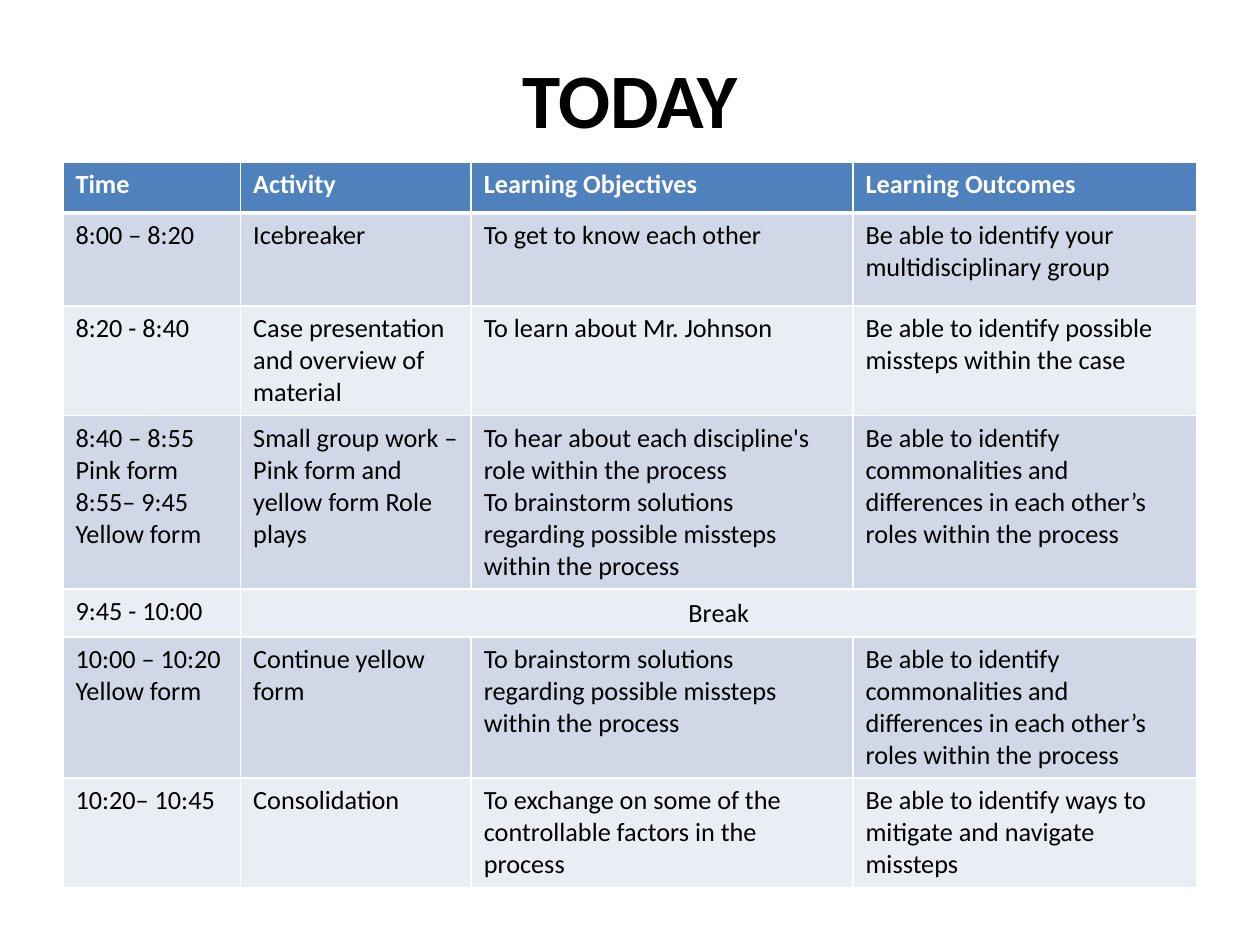
"""Build the TODAY agenda slide: a title above a seven-row schedule table."""
from lxml import etree
from pptx import Presentation
from pptx import util as u
from pptx.dml.color import RGBColor
from pptx.enum import text
from pptx.oxml import ns

BLACK = RGBColor(0x00, 0x00, 0x00)
WHITE = RGBColor(0xFF, 0xFF, 0xFF)
BLUE = RGBColor(0x4F, 0x81, 0xBD)
BANDS = [RGBColor(0xE9, 0xED, 0xF4), RGBColor(0xD0, 0xD8, 0xE8)]
FONT = "Calibri"

SOLUTIONS = "To brainstorm solutions regarding possible missteps within the process"
ROLES = ("Be able to identify commonalities and differences "
         "in each other’s roles within the process")
COLS = [1.41, 1.83, 3.03, 2.73]
ROWS = [
    (0.40, ["Time", "Activity", "Learning Objectives", "Learning Outcomes"]),
    (0.74, ["8:00 – 8:20", "Icebreaker", "To get to know each other",
            "Be able to identify your multidisciplinary group"]),
    (0.87, ["8:20 - 8:40", "Case presentation and overview of material",
            "To learn about Mr. Johnson",
            "Be able to identify possible missteps within the case"]),
    (1.37, ["8:40 – 8:55 Pink form\n8:55– 9:45\nYellow form",
            "Small group work – Pink form and yellow form Role plays",
            "To hear about each discipline's role within the process\n" + SOLUTIONS,
            ROLES]),
    (0.38, ["9:45 - 10:00", "Break", "", ""]),
    (1.12, ["10:00 – 10:20\nYellow form", "Continue yellow form", SOLUTIONS, ROLES]),
    (0.86, ["10:20– 10:45", "Consolidation",
            "To exchange on some of the controllable factors in the process",
            "Be able to identify ways to mitigate and navigate missteps"]),
]
BREAK_ROW = 4


def add_border(cell, side, width):
    ln = etree.SubElement(cell._tc.get_or_add_tcPr(), ns.qn("a:" + side),
                          w=str(u.Pt(width)))
    fill = etree.SubElement(ln, ns.qn("a:solidFill"))
    etree.SubElement(fill, ns.qn("a:srgbClr"), val=str(WHITE))


prs = Presentation()
prs.slide_width, prs.slide_height = u.Inches(10), u.Inches(7.5)
s = prs.slides.add_slide(prs.slide_layouts[5])

title = s.shapes.title
title.left, title.top = u.Inches(0.5), u.Inches(0.15)
title.width, title.height = u.Inches(9), u.Inches(1.25)
tf = title.text_frame
tf.text = "TODAY"
tf.vertical_anchor = text.MSO_ANCHOR.MIDDLE
p = tf.paragraphs[0]
p.alignment = text.PP_ALIGN.CENTER
p.font.name, p.font.size, p.font.bold = FONT, u.Pt(44), True
p.font.color.rgb = BLACK

table = s.shapes.add_table(
    len(ROWS), len(COLS), u.Inches(0.5), u.Inches(1.29),
    u.Inches(sum(COLS)), u.Inches(sum(h for h, _ in ROWS))).table
for col, width in zip(table.columns, COLS):
    col.width = u.Inches(width)

for i, (height, entries) in enumerate(ROWS):
    table.rows[i].height = u.Inches(height)
    header = i == 0
    for j, entry in enumerate(entries):
        cell = table.cell(i, j)
        for side in ("lnL", "lnR", "lnT", "lnB"):
            thick = (i, side) in ((0, "lnB"), (1, "lnT"))
            add_border(cell, side, 3 if thick else 1)
        cell.fill.solid()
        cell.fill.fore_color.rgb = BLUE if header else BANDS[i % 2]
        cell.text_frame.text = entry
        for p in cell.text_frame.paragraphs:
            p.font.name, p.font.size, p.font.bold = FONT, u.Pt(15), header
            p.font.color.rgb = WHITE if header else BLACK

pause = table.cell(BREAK_ROW, 1)
pause.merge(table.cell(BREAK_ROW, 3))
pause.vertical_anchor = text.MSO_ANCHOR.MIDDLE
pause.text_frame.paragraphs[0].alignment = text.PP_ALIGN.CENTER

prs.save("out.pptx")
